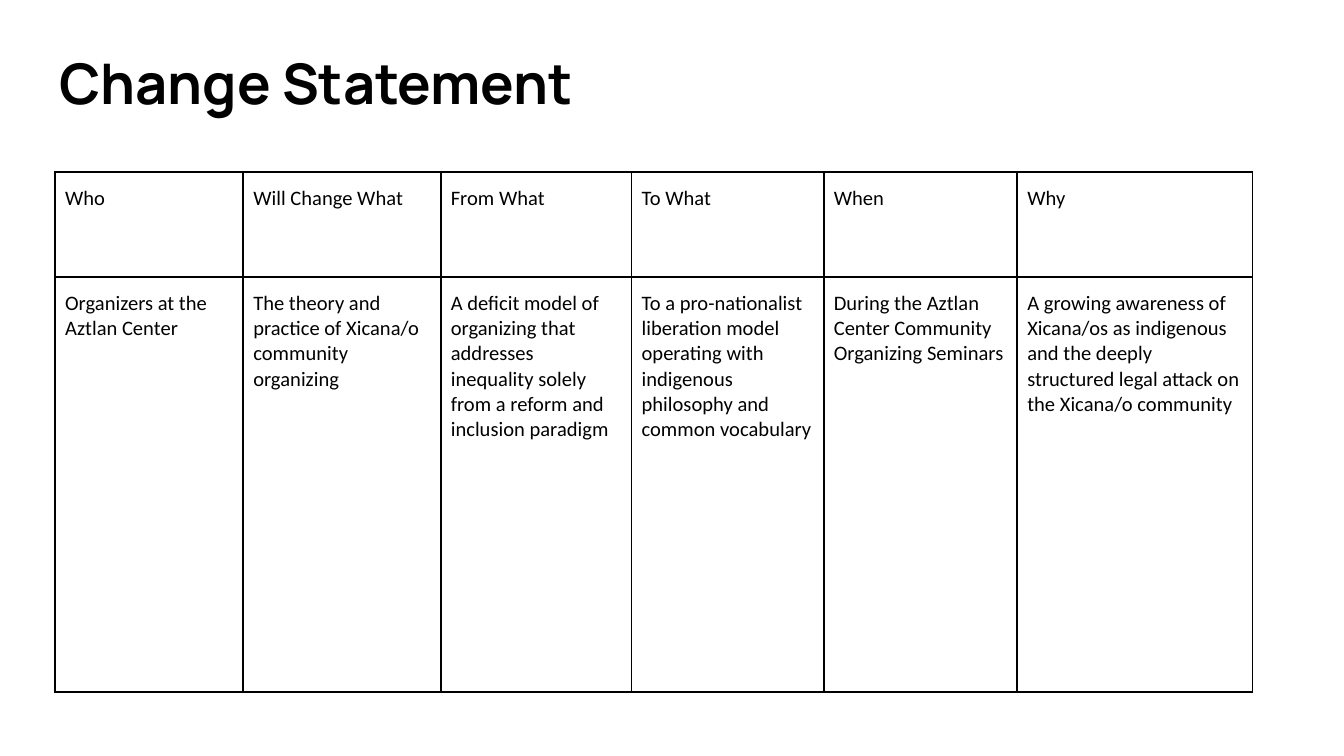
from dataclasses import dataclass

from lxml import etree
from pptx import Presentation
from pptx.dml.color import RGBColor
from pptx.enum.text import MSO_ANCHOR, MSO_AUTO_SIZE, PP_ALIGN
from pptx.oxml.ns import qn
from pptx.util import Inches, Pt

LEFT = PP_ALIGN.LEFT
TOP, MIDDLE = MSO_ANCHOR.TOP, MSO_ANCHOR.MIDDLE
NO_AUTOFIT = MSO_AUTO_SIZE.NONE
TITLE_ONLY = 5


@dataclass(frozen=True)
class Theme:
    ink: str = "000000"
    paper: str = "FFFFFF"
    title_font: str = "Manrope"
    body_font: str = "Calibri"
    title_size: int = 30
    body_size: int = 11
    border: int = 1


THEME = Theme()

# Heading, statement and column width in inches
COLUMNS = [
    ("Who", "Organizers at the Aztlan Center", 1.4),
    ("Will Change What",
     "The theory and practice of Xicana/o community organizing", 1.47),
    ("From What",
     "A deficit model of organizing that addresses inequality solely "
     "from a reform and inclusion paradigm", 1.42),
    ("To What",
     "To a pro-nationalist liberation model operating with indigenous "
     "philosophy and common vocabulary", 1.43),
    ("When",
     "During the Aztlan Center Community Organizing Seminars", 1.44),
    ("Why",
     "A growing awareness of Xicana/os as indigenous and the deeply "
     "structured legal attack on the Xicana/o community", 1.75),
]
ROW_HEIGHTS = (0.78, 3.09)


def format_text(tf, font, size, bold=False):
    for p in tf.paragraphs:
        p.alignment = LEFT
        for r in p.runs:
            r.font.name = font
            r.font.size = Pt(size)
            r.font.bold = bold
            r.font.color.rgb = RGBColor.from_string(THEME.ink)


def set_margins(item, x, y):
    item.margin_left = item.margin_right = x
    item.margin_top = item.margin_bottom = y


def set_borders(cell):
    """Draw all four cell edges; they must come before the fill in tcPr."""
    tc_pr = cell._tc.get_or_add_tcPr()
    for i, edge in enumerate(("lnL", "lnR", "lnT", "lnB")):
        ln = etree.Element(qn(f"a:{edge}"), w=str(Pt(THEME.border)))
        fill = etree.SubElement(ln, qn("a:solidFill"))
        etree.SubElement(fill, qn("a:srgbClr"), val=THEME.ink)
        tc_pr.insert(i, ln)


def set_title(slide, text):
    title = slide.shapes.title
    title.left, title.top = Inches(0.34), Inches(0.26)
    title.width, title.height = Inches(9.32), Inches(0.7)
    tf = title.text_frame
    tf.text = text
    tf.word_wrap = True
    tf.auto_size = NO_AUTOFIT
    tf.vertical_anchor = MIDDLE
    set_margins(tf, Inches(0.1), Inches(0.1))
    format_text(tf, THEME.title_font, THEME.title_size, bold=True)


def fill_cell(cell, text):
    cell.text_frame.text = text
    cell.vertical_anchor = TOP
    set_margins(cell, Inches(0.3) // 4, Inches(0.1))
    format_text(cell.text_frame, THEME.body_font, THEME.body_size)
    cell.fill.background()
    set_borders(cell)


def add_statement_table(slide):
    *rows, widths = zip(*COLUMNS)
    table = slide.shapes.add_table(
        len(rows), len(widths), Inches(0.41), Inches(1.28),
        Inches(sum(widths)), Inches(sum(ROW_HEIGHTS))).table
    table.first_row = table.horz_banding = False
    for column, width in zip(table.columns, widths):
        column.width = Inches(width)
    for row, height, texts in zip(table.rows, ROW_HEIGHTS, rows):
        row.height = Inches(height)
        for cell, text in zip(row.cells, texts):
            fill_cell(cell, text)


def main():
    prs = Presentation()
    prs.slide_width = Inches(10)
    prs.slide_height = prs.slide_width * 9 // 16
    slide = prs.slides.add_slide(prs.slide_layouts[TITLE_ONLY])
    background = slide.background.fill
    background.solid()
    background.fore_color.rgb = RGBColor.from_string(THEME.paper)
    set_title(slide, "Change Statement")
    add_statement_table(slide)
    prs.save("out.pptx")


if __name__ == "__main__":
    main()
